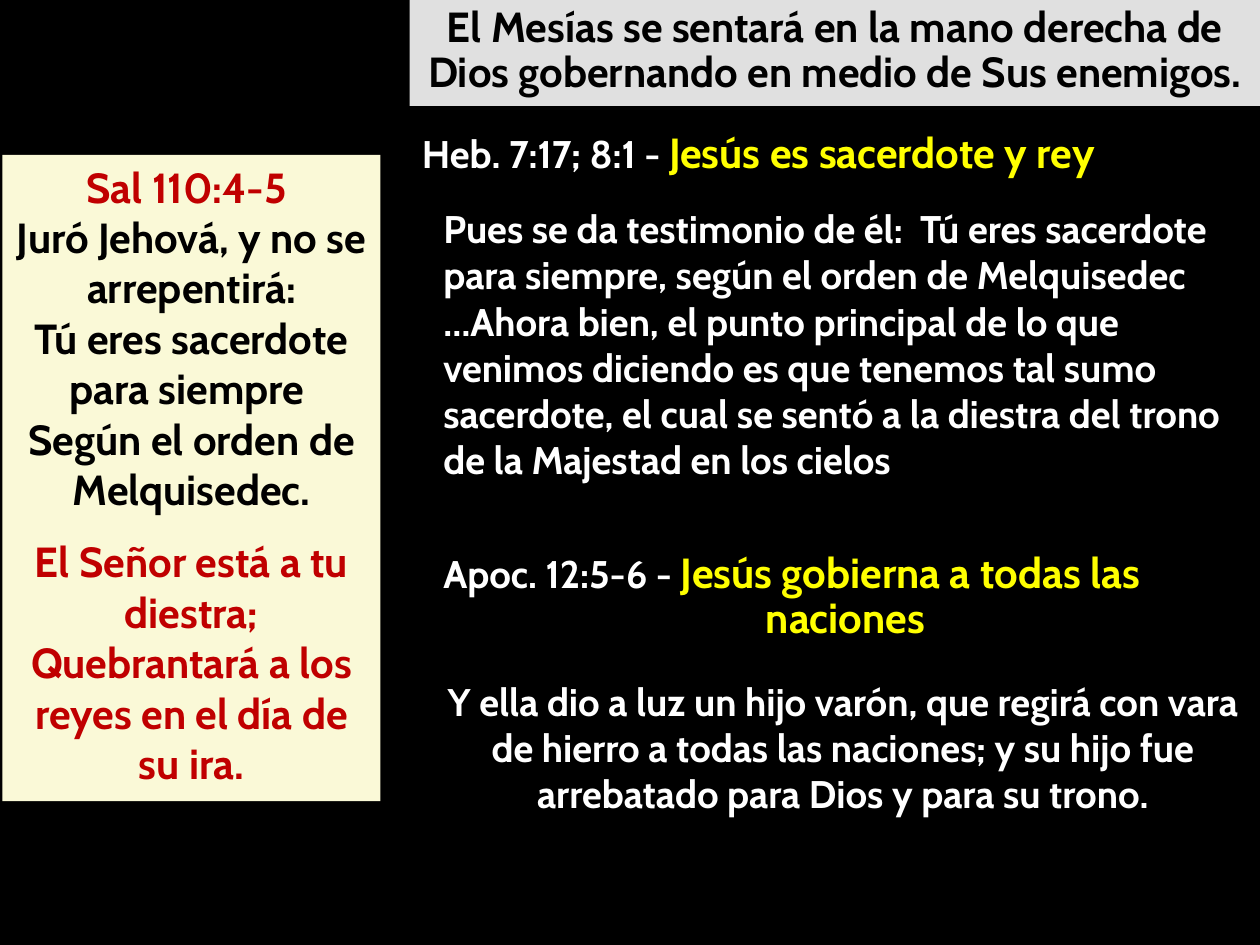
from pptx import Presentation
from pptx.dml.color import RGBColor
from pptx.enum.shapes import MSO_SHAPE
from pptx.enum.text import MSO_ANCHOR, MSO_AUTO_SIZE, PP_ALIGN
from pptx.util import Inches, Pt

COLORS = {
    "background": "000000",
    "white": "FFFFFF",
    "black": "000000",
    "yellow": "FFFF00",
    "red": "C00000",
    "cream": "FAF9D7",
    "gray": "E0E0E0",
}
LEFT, CENTER = PP_ALIGN.LEFT, PP_ALIGN.CENTER


class SlideBuilder:
    font_name = "Cabin"
    large = 24
    medium = 22

    def __init__(self, presentation):
        self.slide = presentation.slides.add_slide(presentation.slide_layouts[5])
        self.fill(self.slide.background, "background")

    def fill(self, target, color):
        target.fill.solid()
        target.fill.fore_color.rgb = RGBColor.from_string(COLORS[color])

    def set_text(self, shape, paragraphs, align=LEFT, line_spacing=1.0):
        text_frame = shape.text_frame
        text_frame.word_wrap = True
        text_frame.auto_size = MSO_AUTO_SIZE.NONE
        text_frame.vertical_anchor = MSO_ANCHOR.TOP
        for index, runs in enumerate(paragraphs):
            paragraph = text_frame.add_paragraph() if index else text_frame.paragraphs[0]
            paragraph.alignment = align
            paragraph.line_spacing = line_spacing
            for text, size, color in runs:
                run = paragraph.add_run()
                run.text = text
                run.font.name = self.font_name
                run.font.size = Pt(size)
                run.font.bold = True
                run.font.color.rgb = RGBColor.from_string(COLORS[color])
        return text_frame.paragraphs

    def title(self, text, left, top, width, height):
        shape = self.slide.shapes.title
        shape.left, shape.top = Inches(left), Inches(top)
        shape.width, shape.height = Inches(width), Inches(height)
        self.fill(shape, "gray")
        self.set_text(shape, [[(text, self.large, "black")]], CENTER, 0.9)

    def panel(self, lines, left, top, width, height):
        shape = self.slide.shapes.add_shape(
            MSO_SHAPE.RECTANGLE, Inches(left), Inches(top), Inches(width), Inches(height)
        )
        shape.shadow.inherit = False
        shape.line.fill.background()
        self.fill(shape, "cream")
        return self.set_text(
            shape, [[(text, self.large, color)] for text, color in lines], CENTER
        )

    def text_box(self, paragraphs, left, top, width, height, align=LEFT, line_spacing=1.0):
        shape = self.slide.shapes.add_textbox(
            Inches(left), Inches(top), Inches(width), Inches(height)
        )
        return self.set_text(shape, paragraphs, align, line_spacing)

    def heading(self, reference, lines, left, top, width, height):
        paragraphs = [[(line, self.large, "yellow")] for line in lines]
        paragraphs[0].insert(0, (reference, self.medium, "white"))
        return self.text_box(paragraphs, left, top, width, height, line_spacing=0.9)

    def passage(self, lines, left, top, width, height, align=LEFT):
        paragraphs = [[(line, self.medium, "white")] for line in lines]
        self.text_box(paragraphs, left, top, width, height, align)


def main():
    presentation = Presentation()
    presentation.slide_width = Inches(10)
    presentation.slide_height = Inches(7.5)
    builder = SlideBuilder(presentation)

    builder.title(
        "El Mesías se sentará en la mano derecha de Dios gobernando "
        "en medio de Sus enemigos.",
        3.25, 0, 6.75, 0.84,
    )

    psalm = builder.panel(
        [
            ("Sal 110:4-5 ", "red"),
            ("Juró Jehová, y no se arrepentirá:", "black"),
            ("Tú eres sacerdote para siempre ", "black"),
            ("Según el orden de Melquisedec.", "black"),
            ("El Señor está a tu diestra;", "red"),
            ("Quebrantará a los reyes en el día de su ira.", "red"),
        ],
        0.02, 1.23, 3, 5.13,
    )
    psalm[4].space_before = Pt(12.5)

    builder.heading(
        "Heb. 7:17; 8:1 - ", ["Jesús es sacerdote y rey"], 3.25, 1, 6.75, 0.46
    )
    builder.passage(
        [
            "Pues se da testimonio de él:  Tú eres sacerdote para siempre, "
            "según el orden de Melquisedec",
            "…Ahora bien, el punto principal de lo que venimos diciendo es que "
            "tenemos tal sumo sacerdote, el cual se sentó a la diestra del trono "
            "de la Majestad en los cielos",
        ],
        3.42, 1.58, 6.58, 2.32,
    )

    revelation = builder.heading(
        "Apoc. 12:5-6 - ", ["Jesús gobierna a todas las", "naciones"],
        3.42, 4.33, 6.58, 0.84,
    )
    revelation[1].alignment = CENTER
    builder.passage(
        [
            "Y ella dio a luz un hijo varón, que regirá con vara de hierro a todas "
            "las naciones; y su hijo fue arrebatado para Dios y para su trono."
        ],
        3.4, 5.33, 6.58, 1.21, CENTER,
    )

    presentation.save("out.pptx")


if __name__ == "__main__":
    main()
